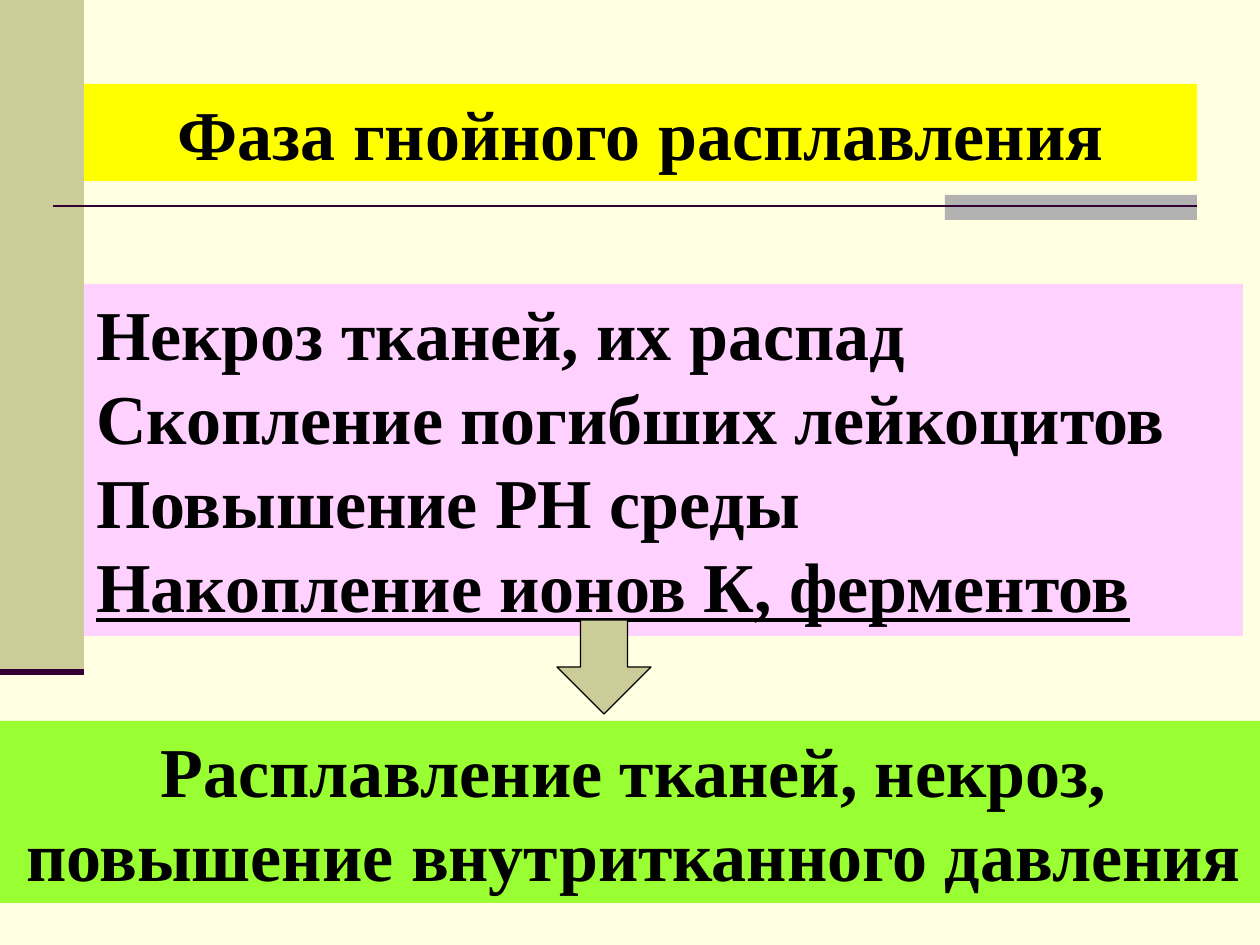
from dataclasses import dataclass

from lxml.etree import SubElement
from pptx import Presentation
from pptx.dml.color import RGBColor
from pptx.enum.shapes import MSO_CONNECTOR as Connector, MSO_SHAPE as Preset
from pptx.enum.text import MSO_ANCHOR as Anchor, PP_ALIGN as Align
from pptx.oxml.ns import qn
from pptx.util import Pt

EMU_PER_PX = 914400 / 126


@dataclass(frozen=True)
class Theme:
    background: str = "FFFFE1"
    khaki: str = "CCCC99"
    gray: str = "B2B2B2"
    plum: str = "330033"
    title: str = "FFFF00"
    signs: str = "FFD1FF"
    outcome: str = "99FF33"
    ink: str = "000000"
    font: str = "Times New Roman"
    size: int = 40
    leading: int = 48


THEME = Theme()


def px(length):
    return round(length * EMU_PER_PX)


def color(code):
    return RGBColor.from_string(code)


def add_block(slide, box, fill, preset=Preset.RECTANGLE, outline=None):
    shape = slide.shapes.add_shape(preset, *map(px, box))
    shape.shadow.inherit = False
    shape.fill.solid()
    shape.fill.fore_color.rgb = color(fill)
    if outline:
        shape.line.color.rgb = color(outline)
        shape.line.width = Pt(0.75)
    else:
        shape.line.fill.background()
    return shape


def add_rule(slide, left, right, y, width):
    line = slide.shapes.add_connector(
        Connector.STRAIGHT, px(left), px(y), px(right), px(y))
    line.line.color.rgb = color(THEME.plum)
    line.line.width = Pt(width)
    SubElement(line._element.spPr, qn("a:effectLst"))


def write(shape, text, align=Align.LEFT, wrap=True, underlined=()):
    """Fill the shape with one paragraph for each line of the text."""
    frame = shape.text_frame
    frame.word_wrap = wrap
    frame.vertical_anchor = Anchor.TOP
    for index, line in enumerate(text.split("\n")):
        paragraph = frame.paragraphs[0] if index == 0 else frame.add_paragraph()
        paragraph.alignment = align
        paragraph.line_spacing = Pt(THEME.leading)
        run = paragraph.add_run()
        run.text = line
        run.font.name = THEME.font
        run.font.size = Pt(THEME.size)
        run.font.bold = True
        run.font.color.rgb = color(THEME.ink)
        if line in underlined:
            run.font.underline = True


def draw_frame(slide, box):
    left, top, width, height = box
    # Side band with its foot rule
    add_block(slide, (left, top, 84, height), THEME.khaki)
    # Accent and rule under the title
    add_block(slide, (left + width - 252, top + 195, 252, 25), THEME.gray)
    add_rule(slide, left + 53, left + width, top + 206, 1.5)
    add_rule(slide, left, left + 84, top + height, 3.5)


def draw_title(slide, box):
    write(add_block(slide, box, THEME.title),
          "Фаза гнойного расплавления", align=Align.CENTER)


def draw_signs(slide, box):
    last = "Накопление ионов К, ферментов"
    lines = ["Некроз тканей, их распад", "Скопление погибших лейкоцитов",
             "Повышение РН среды", last]
    write(add_block(slide, box, THEME.signs), "\n".join(lines), underlined=(last,))


def draw_arrow(slide, box):
    add_block(slide, box, THEME.khaki, Preset.DOWN_ARROW, outline=THEME.ink)


def draw_outcome(slide, box):
    write(add_block(slide, box, THEME.outcome),
          "Расплавление тканей, некроз,\nповышение внутритканного давления",
          align=Align.CENTER, wrap=False)


def main():
    presentation = Presentation()
    presentation.slide_width, presentation.slide_height = px(1260), px(945)
    slide = presentation.slides.add_slide(presentation.slide_layouts[6])
    slide.background.fill.solid()
    slide.background.fill.fore_color.rgb = color(THEME.background)

    draw_frame(slide, (0, 0, 1197, 672))
    draw_title(slide, (84, 84, 1113, 97))
    draw_signs(slide, (84, 284, 1159, 352))
    draw_arrow(slide, (557, 620, 94, 94))
    draw_outcome(slide, (0, 721, 1267, 182))
    presentation.save("out.pptx")


if __name__ == "__main__":
    main()
